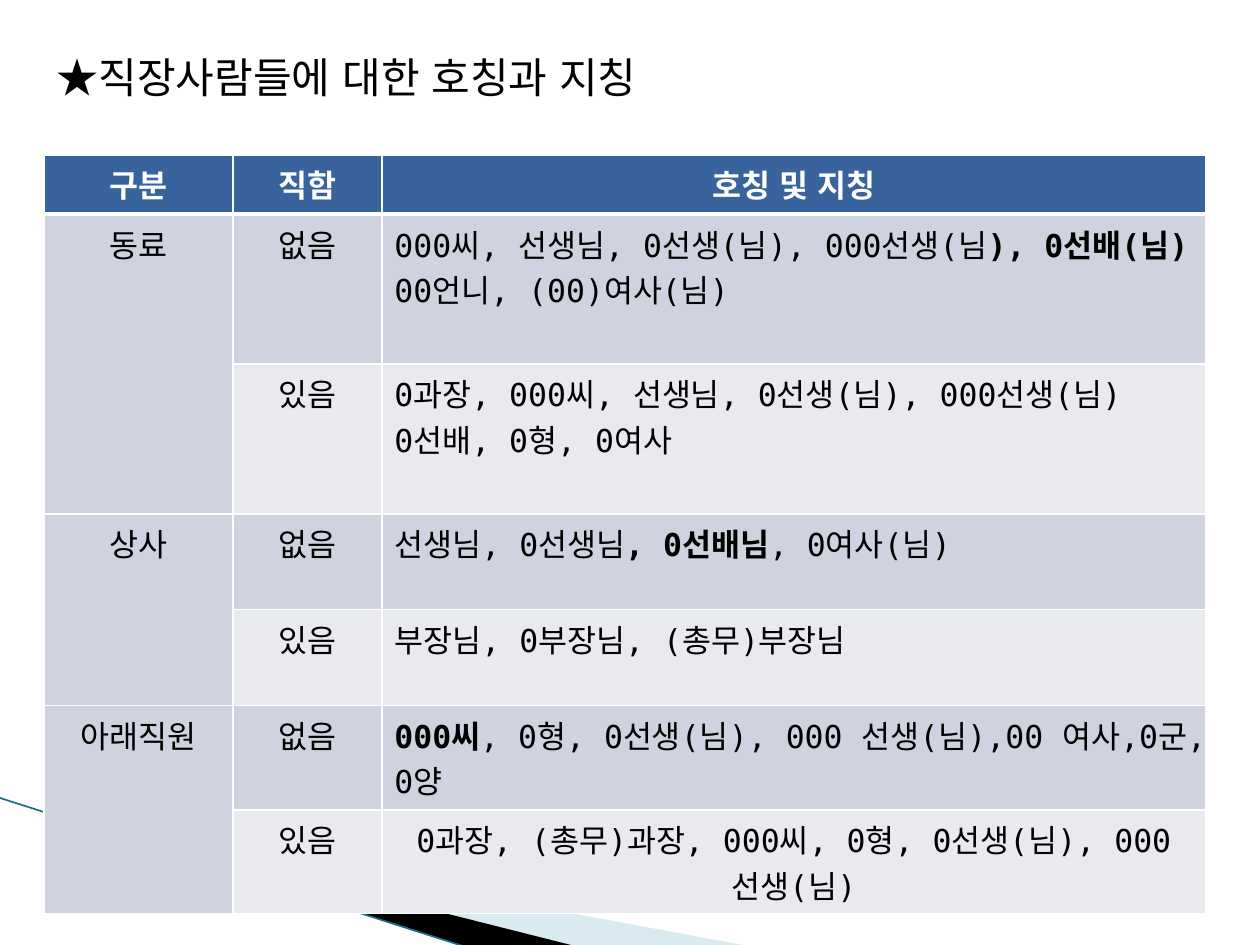
from dataclasses import dataclass
from typing import NamedTuple

from lxml.etree import SubElement
from pptx import Presentation
from pptx.dml.color import RGBColor
from pptx.enum.lang import MSO_LANGUAGE_ID
from pptx.enum.shapes import MSO_CONNECTOR
from pptx.enum.text import MSO_ANCHOR, MSO_AUTO_SIZE, PP_ALIGN
from pptx.oxml.ns import qn
from pptx.util import Inches, Pt


@dataclass(frozen=True)
class Theme:
    font: str = "DejaVu Sans Mono"
    star_font: str = "Noto Sans CJK KR"
    title_size: int = 24
    table_size: int = 18
    text: str = "000000"
    white: str = "FFFFFF"
    header: str = "39639D"
    dark_band: str = "CED3DF"
    light_band: str = "E8EAEF"
    wedge: str = "A0CBDC"
    line: str = "1A6E80"


class Span(NamedTuple):
    text: str
    bold: bool = False


class Wedge(NamedTuple):
    points: list[tuple[float, float]]
    color: str
    opacity: int


class Forms(NamedTuple):
    title: str
    height: float
    paragraphs: list[list[Span]]
    align: PP_ALIGN = PP_ALIGN.LEFT


class Group(NamedTuple):
    name: str
    rows: list[Forms]


THEME = Theme()
HEADINGS = ["구분", "직함", "호칭 및 지칭"]
COLUMN_WIDTHS = [1.5, 1.18, 6.54]
HEADER_HEIGHT = 0.47
WEDGES = [
    Wedge([(0.55, 6.51), (5.95, 7.51), (4.56, 7.51), (0.55, 6.5)], THEME.wedge, 40),
    Wedge([(0.53, 6.49), (4.57, 7.51), (3.72, 7.52), (0.54, 6.5)], THEME.text, 100),
]
GROUPS = [
    Group("동료", [
        Forms("없음", 1.19, [
            [Span("000씨, 선생님, 0선생(님), 000선생(님"), Span("), 0선배(님)", True)],
            [Span("00언니, (00)여사(님)")],
        ]),
        Forms("있음", 1.19, [
            [Span("0과장, 000씨, 선생님, 0선생(님), 000선생(님)")],
            [Span("0선배, 0형, 0여사")],
        ]),
    ]),
    Group("상사", [
        Forms("없음", 0.76, [
            [Span("선생님, 0선생님"), Span(", 0선배님", True), Span(", 0여사(님)")],
        ]),
        Forms("있음", 0.76, [[Span("부장님, 0부장님, (총무)부장님")]]),
    ]),
    Group("아래직원", [
        Forms("없음", 0.83, [
            [Span("000씨", True), Span(", 0형, 0선생(님), 000 선생(님),00 여사,0군,0양")],
        ]),
        Forms("있음", 0.82, [
            [Span("0과장, (총무)과장, 000씨, 0형, 0선생(님), 000선생(님)")],
        ], PP_ALIGN.CENTER),
    ]),
]


def rgb(color: str) -> RGBColor:
    return RGBColor.from_string(color)


def draw_wedge(page, wedge: Wedge) -> None:
    points = [(Inches(x), Inches(y)) for x, y in wedge.points]
    builder = page.shapes.build_freeform(*points[0])
    builder.add_line_segments(points[1:], close=True)
    shape = builder.convert_to_shape()
    shape.shadow.inherit = False
    shape.fill.solid()
    shape.fill.fore_color.rgb = rgb(wedge.color)
    shape.line.fill.background()
    if wedge.opacity < 100:
        color = shape._element.spPr.find(qn("a:solidFill"))[0]
        SubElement(color, qn("a:alpha"), val=str(wedge.opacity * 1000))


def draw_line(page) -> None:
    line = page.shapes.add_connector(
        MSO_CONNECTOR.STRAIGHT, Inches(-0.01), Inches(6.33), Inches(3.71), Inches(7.52))
    line.line.color.rgb = rgb(THEME.line)
    line.line.width = Pt(0.95)
    SubElement(line._element.spPr, qn("a:effectLst"))


def add_span(para, span: Span, font: str, size: int, color: str) -> None:
    run = para.add_run()
    run.text = span.text
    run.font.name = font
    run.font.size = Pt(size)
    run.font.bold = span.bold
    run.font.color.rgb = rgb(color)
    run.font.language_id = MSO_LANGUAGE_ID.KOREAN


def write_title(page) -> None:
    title = page.shapes.title
    title.left, title.top = Inches(0.35), Inches(0.36)
    title.width, title.height = Inches(5.24), Inches(0.5)
    frame = title.text_frame
    frame.word_wrap = False
    frame.auto_size = MSO_AUTO_SIZE.SHAPE_TO_FIT_TEXT
    frame.vertical_anchor = MSO_ANCHOR.TOP
    para = frame.paragraphs[0]
    para.alignment = PP_ALIGN.LEFT
    add_span(para, Span("★"), THEME.star_font, THEME.title_size, THEME.text)
    add_span(para, Span("직장사람들에 대한 호칭과 지칭"), THEME.font, THEME.title_size, THEME.text)


def style_cell(cell, fill: str, top: int = 1, bottom: int = 1) -> None:
    properties = cell._tc.get_or_add_tcPr()
    for side, width in [("L", 1), ("R", 1), ("T", top), ("B", bottom)]:
        border = SubElement(properties, qn(f"a:ln{side}"), w=str(Pt(width)))
        solid = SubElement(border, qn("a:solidFill"))
        SubElement(solid, qn("a:srgbClr"), val=THEME.white)
    cell.fill.solid()
    cell.fill.fore_color.rgb = rgb(fill)


def write_cell(cell, paragraphs: list[list[Span]], align: PP_ALIGN = PP_ALIGN.CENTER,
               color: str = THEME.text) -> None:
    frame = cell.text_frame
    for index, spans in enumerate(paragraphs):
        para = frame.add_paragraph() if index else frame.paragraphs[0]
        para.alignment = align
        for span in spans:
            add_span(para, span, THEME.font, THEME.table_size, color)


def draw_table(page) -> None:
    heights = [HEADER_HEIGHT] + [forms.height for group in GROUPS for forms in group.rows]
    table = page.shapes.add_table(
        len(heights), len(HEADINGS), Inches(0.35), Inches(1.23),
        Inches(sum(COLUMN_WIDTHS)), Inches(sum(heights))).table
    for column, width in zip(table.columns, COLUMN_WIDTHS):
        column.width = Inches(width)
    for row, height in zip(table.rows, heights):
        row.height = Inches(height)
    for index, heading in enumerate(HEADINGS):
        cell = table.cell(0, index)
        style_cell(cell, THEME.header, bottom=3)
        write_cell(cell, [[Span(heading, True)]], color=THEME.white)

    row_index = 1
    for group in GROUPS:
        first = table.cell(row_index, 0)
        first.merge(table.cell(row_index + len(group.rows) - 1, 0))
        write_cell(first, [[Span(group.name)]])
        for forms in group.rows:
            band = THEME.dark_band if row_index % 2 else THEME.light_band
            for column, fill in enumerate([THEME.dark_band, band, band]):
                style_cell(table.cell(row_index, column), fill, top=3 if row_index == 1 else 1)
            write_cell(table.cell(row_index, 1), [[Span(forms.title)]])
            write_cell(table.cell(row_index, 2), forms.paragraphs, forms.align)
            row_index += 1


def main() -> None:
    deck = Presentation()
    deck.slide_width, deck.slide_height = Inches(10), Inches(7.5)
    page = deck.slides.add_slide(deck.slide_layouts[5])
    for wedge in WEDGES:
        draw_wedge(page, wedge)
    draw_line(page)
    draw_table(page)
    write_title(page)
    deck.save("out.pptx")


if __name__ == "__main__":
    main()
